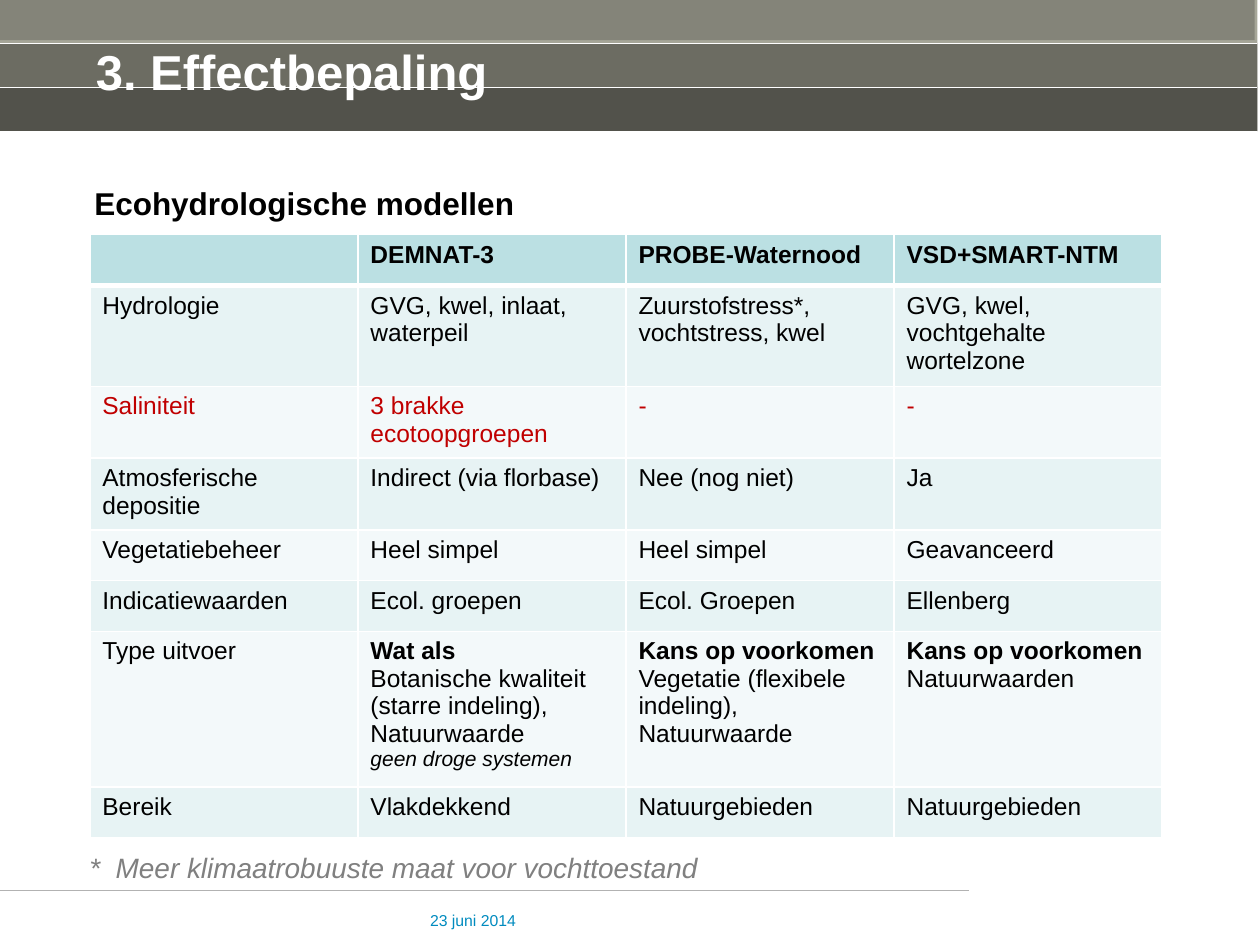
from lxml import etree
from pptx import Presentation
from pptx.dml.color import RGBColor
from pptx.enum import shapes, text
from pptx.oxml import ns
from pptx.util import Pt

HUES = {
    "band": "A6A698", "shade": "000000", "white": "FFFFFF", "rule": "B2B2B2",
    "date": "008BBF", "ink": "000000", "note": "808080", "red": "C00000",
    "head": "BBE0E3", "odd": "E7F3F4", "even": "F3F9FA",
}

WIDE = 718.5   # width of the banner
BAND = 25      # height of one banner stripe

ROWS = [
    ["", "DEMNAT-3", "PROBE-Waternood", "VSD+SMART-NTM"],
    ["Hydrologie", "GVG, kwel, inlaat, waterpeil",
     "Zuurstofstress*, vochtstress, kwel",
     "GVG, kwel, vochtgehalte wortelzone"],
    ["Saliniteit", "3 brakke\necotoopgroepen", "-", "-"],
    ["Atmosferische depositie", "Indirect (via florbase)",
     "Nee (nog niet)", "Ja"],
    ["Vegetatiebeheer", "Heel simpel", "Heel simpel", "Geavanceerd"],
    ["Indicatiewaarden", "Ecol. groepen", "Ecol. Groepen", "Ellenberg"],
    ["Type uitvoer",
     "Wat als\nBotanische kwaliteit (starre indeling),\nNatuurwaarde\n"
     "geen droge systemen",
     "Kans op voorkomen\nVegetatie (flexibele indeling),\nNatuurwaarde",
     "Kans op voorkomen\nNatuurwaarden"],
    ["Bereik", "Vlakdekkend", "Natuurgebieden", "Natuurgebieden"],
]
TALL = [29, 57.5, 41, 41, 29, 29, 89, 29]
BOLD = {"Wat als", "Kans op voorkomen"}
SMALL = {"geen droge systemen"}


def rgb(name):
    return RGBColor.from_string(HUES[name])


def style(para, size, hue, bold=False, italic=False):
    font = para.font
    font.name, font.size = "Arial", Pt(size)
    font.bold, font.italic = bold, italic
    font.color.rgb = rgb(hue)


def add_band(slide, left, top, height, hue, alpha=None):
    band = slide.shapes.add_shape(shapes.MSO_SHAPE.RECTANGLE, Pt(left),
                                  Pt(top), Pt(WIDE), Pt(height))
    band.shadow.inherit = False
    band.line.fill.background()
    band.fill.solid()
    band.fill.fore_color.rgb = rgb(hue)
    if alpha:
        color = band.fill._xPr.find(".//" + ns.qn("a:srgbClr"))
        etree.SubElement(color, ns.qn("a:alpha"), val=str(alpha * 1000))


def add_rule(slide, start, end, y, hue):
    rule = slide.shapes.add_connector(shapes.MSO_CONNECTOR.STRAIGHT,
                                      Pt(start), Pt(y), Pt(end), Pt(y))
    rule.line.color.rgb = rgb(hue)
    rule.line.width = Pt(0.75)
    etree.SubElement(rule._element.spPr, ns.qn("a:effectLst"))


def add_label(slide, words, box, size, hue, inset=None, **looks):
    label = slide.shapes.add_textbox(*map(Pt, box))
    frame = label.text_frame
    frame.word_wrap = True
    if inset is not None:
        frame.margin_left = frame.margin_right = 0
        frame.margin_top = frame.margin_bottom = Pt(inset)
    frame.text = words
    style(frame.paragraphs[0], size, hue, **looks)
    return frame


def add_edges(cell, widths):
    props = cell._tc.get_or_add_tcPr()
    for spot, (side, width) in enumerate(widths.items()):
        edge = etree.Element(ns.qn("a:ln" + side), w=str(Pt(width)))
        fill = etree.SubElement(edge, ns.qn("a:solidFill"))
        etree.SubElement(fill, ns.qn("a:srgbClr"), val=HUES["white"])
        props.insert(spot, edge)


def fill_cell(cell, words, row):
    cell.text = words
    for para in cell.text_frame.paragraphs:
        small = para.text in SMALL
        style(para, 12 if small else 14, "red" if row == 2 else "ink",
              bold=row == 0 or para.text in BOLD, italic=small)
    cell.fill.solid()
    hue = "head" if row == 0 else "odd" if row % 2 else "even"
    cell.fill.fore_color.rgb = rgb(hue)
    # A thick line parts the header from the body
    add_edges(cell, {"L": 1, "R": 1, "T": 3 if row == 1 else 1,
                     "B": 3 if row == 0 else 1})


def add_grid(slide):
    frame = slide.shapes.add_table(len(ROWS), len(ROWS[0]), Pt(51.3),
                                   Pt(134.1), Pt(612.8), Pt(sum(TALL)))
    grid = frame.table
    for row, cells in enumerate(ROWS):
        grid.rows[row].height = Pt(TALL[row])
        for col, words in enumerate(cells):
            fill_cell(grid.cell(row, col), words, row)


def main():
    deck = Presentation()
    deck.slide_width, deck.slide_height = Pt(720), Pt(540)
    slide = deck.slides.add_slide(deck.slide_layouts[6])

    # Banner
    add_band(slide, 0, 0, 3 * BAND, "band")
    add_band(slide, -1.5, -2, BAND, "shade", 20)
    add_band(slide, 0, BAND, BAND, "shade", 35)
    add_band(slide, 0, 2 * BAND, BAND, "shade", 50)
    for step in (1, 2, 3):
        add_rule(slide, 0, WIDE, step * BAND, "white")

    # Footer
    add_rule(slide, 553.5, 0, 509, "rule")
    add_label(slide, "23 juni 2014", (245.8, 520.5, 113, 25), 9, "date",
              inset=0)

    # Headings
    title = add_label(slide, "3. Effectbepaling", (54.8, 18.7, 617, 48.2),
                      28, "white", inset=3.6, bold=True)
    title.vertical_anchor = text.MSO_ANCHOR.MIDDLE
    title.paragraphs[0].line_spacing = 0.9
    add_label(slide, "Ecohydrologische modellen", (46.8, 101.5, 594, 29),
              18, "ink", bold=True)

    # Comparison of models and its footnote
    add_grid(slide)
    add_label(slide, "*  Meer klimaatrobuuste maat voor vochttoestand",
              (44, 482.4, 594, 26.6), 16, "note", italic=True)

    deck.save("out.pptx")


if __name__ == "__main__":
    main()
